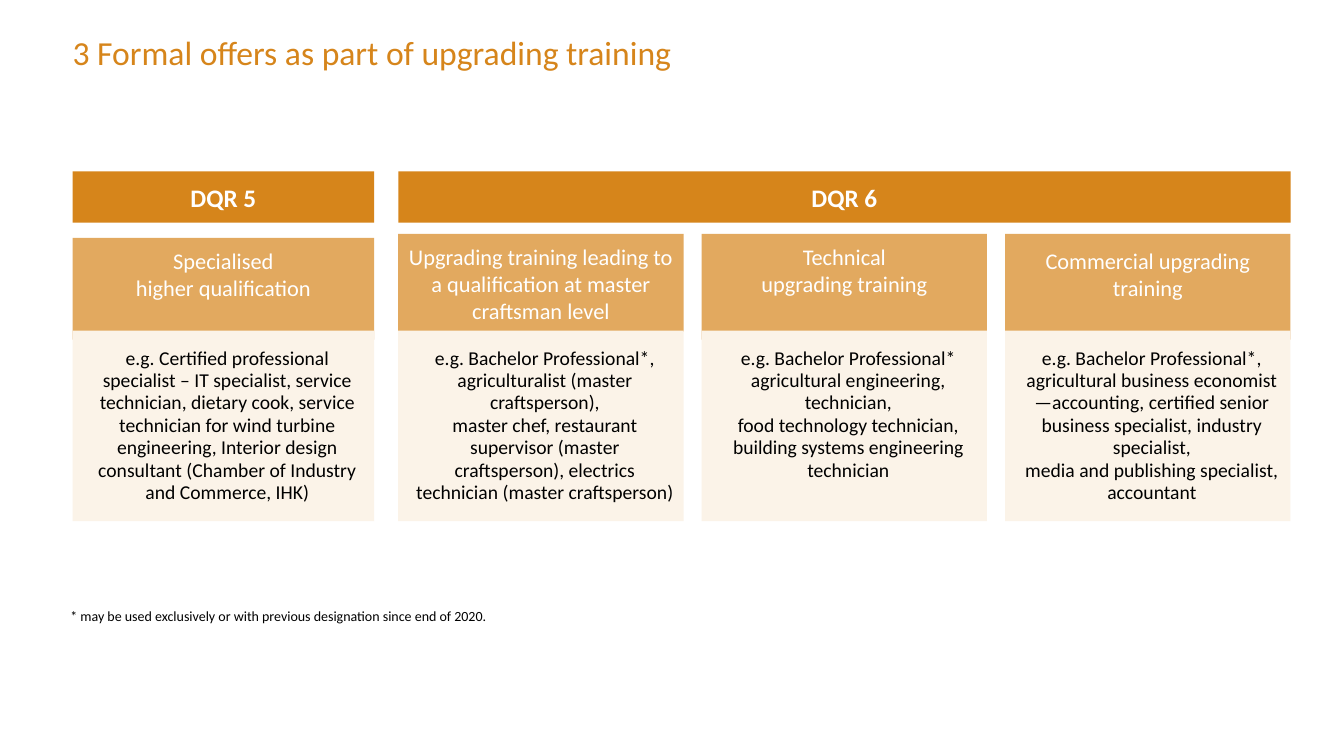
from pptx import Presentation
from pptx import util as u
from pptx.dml.color import RGBColor
from pptx.enum import shapes, text


class Theme:
    font = "Calibri"
    accent, mid, pale = "D6851B", "E2A95F", "FBF3E8"
    white, black = "FFFFFF", "000000"
    title, level, head, body, note = 24, 18, 16, 14, 10


class Deck:
    def __init__(self, theme):
        self.t = theme
        self.prs = Presentation()
        self.prs.slide_width, self.prs.slide_height = u.Inches(13.33), u.Inches(7.5)
        self.s = self.prs.slides.add_slide(self.prs.slide_layouts[5])

    def set_text(self, sp, words, size, color, insets, anchor="TOP", align="CENTER", bold=False, leading=None):
        tf = sp.text_frame
        sides = ("margin_left", "margin_top", "margin_right", "margin_bottom")
        frame = dict(zip(sides, map(u.Inches, insets)))
        frame.update(word_wrap=True, auto_size=text.MSO_AUTO_SIZE.NONE,
                     vertical_anchor=text.MSO_ANCHOR[anchor])
        tf.text = words
        p = tf.paragraphs[0]
        para = dict(alignment=text.PP_ALIGN[align])
        if leading:
            para["line_spacing"] = u.Pt(leading)
        font = dict(name=self.t.font, size=u.Pt(size), bold=bold)
        for r in p.runs:
            r.font.color.rgb = RGBColor.from_string(color)
            for key, value in font.items():
                setattr(r.font, key, value)
        for target, values in ((tf, frame), (p, para)):
            for key, value in values.items():
                setattr(target, key, value)

    def title(self, words, box):
        sp = self.s.shapes.title
        for key, value in zip(("left", "top", "width", "height"), box):
            setattr(sp, key, u.Inches(value))
        self.set_text(sp, words, self.t.title, self.t.accent, (0, 0, 0, 0), align="LEFT")

    def panel(self, words, box, fill, size, color, insets, **style):
        sp = self.s.shapes.add_shape(shapes.MSO_SHAPE.RECTANGLE, *map(u.Inches, box))
        sp.shadow.inherit = False
        sp.fill.solid()
        sp.fill.fore_color.rgb = RGBColor.from_string(fill)
        sp.line.fill.background()
        self.set_text(sp, words, size, color, insets, **style)

    def level(self, words, left, width):
        self.panel(words, (left, 1.7, width, 0.51), self.t.accent, self.t.level, self.t.white,
                   (0.04, 0.08, 0.04, 0), anchor="MIDDLE", bold=True, leading=17)

    def offer(self, left, width, top, height, inset, head, examples):
        self.panel(head, (left, top, width, height), self.t.mid, self.t.head, self.t.white,
                   (0.04, inset, 0.04, 0.08))
        self.panel(examples, (left, 3.28, width, 1.89), self.t.pale, self.t.body, self.t.black,
                   (0.16, 0.16, 0.08, 0.16), leading=16)

    def note(self, words, box):
        sp = self.s.shapes.add_textbox(*map(u.Inches, box))
        self.set_text(sp, words, self.t.note, self.t.black, (0.1, 0.05, 0.1, 0.05), align="LEFT")


def main():
    deck = Deck(Theme)
    deck.title("3 Formal offers as part of upgrading training", (0.72, 0.32, 9.84, 0.49))

    first, wide = 0.72, 2.99
    second, narrow, step = 3.95, 2.83, 3.01
    deck.level("DQR 5", first, wide)
    deck.level("DQR 6", second, 2 * step + narrow)

    deck.offer(first, wide, 2.36, 1.01, 0.09, "Specialised\vhigher qualification",
               "e.g. Certified professional specialist – IT specialist, service technician, "
               "dietary cook, service technician for wind turbine engineering, Interior design "
               "consultant (Chamber of Industry and Commerce, IHK)")
    offers = [
        (0.97, 0.09, "Upgrading training leading to a qualification at master craftsman level",
         "e.g. Bachelor Professional*,\vagriculturalist (master craftsperson),\v"
         "master chef, restaurant supervisor (master craftsperson), electrics technician "
         "(master craftsperson)"),
        (1.05, 0.09, "Technical\vupgrading training",
         "e.g. Bachelor Professional*\vagricultural engineering, technician,\v"
         "food technology technician,\vbuilding systems engineering technician"),
        (1.05, 0.13, "Commercial upgrading training",
         "e.g. Bachelor Professional*, agricultural business economist—accounting, certified "
         "senior business specialist, industry specialist,\v"
         "media and publishing specialist, accountant"),
    ]
    for i, (height, inset, head, examples) in enumerate(offers):
        deck.offer(second + i * step, narrow, 2.32, height, inset, head, examples)

    deck.note("* may be used exclusively or with previous designation since end of 2020.",
              (0.6, 5.98, 8.14, 0.27))
    deck.prs.save("out.pptx")


if __name__ == "__main__":
    main()
